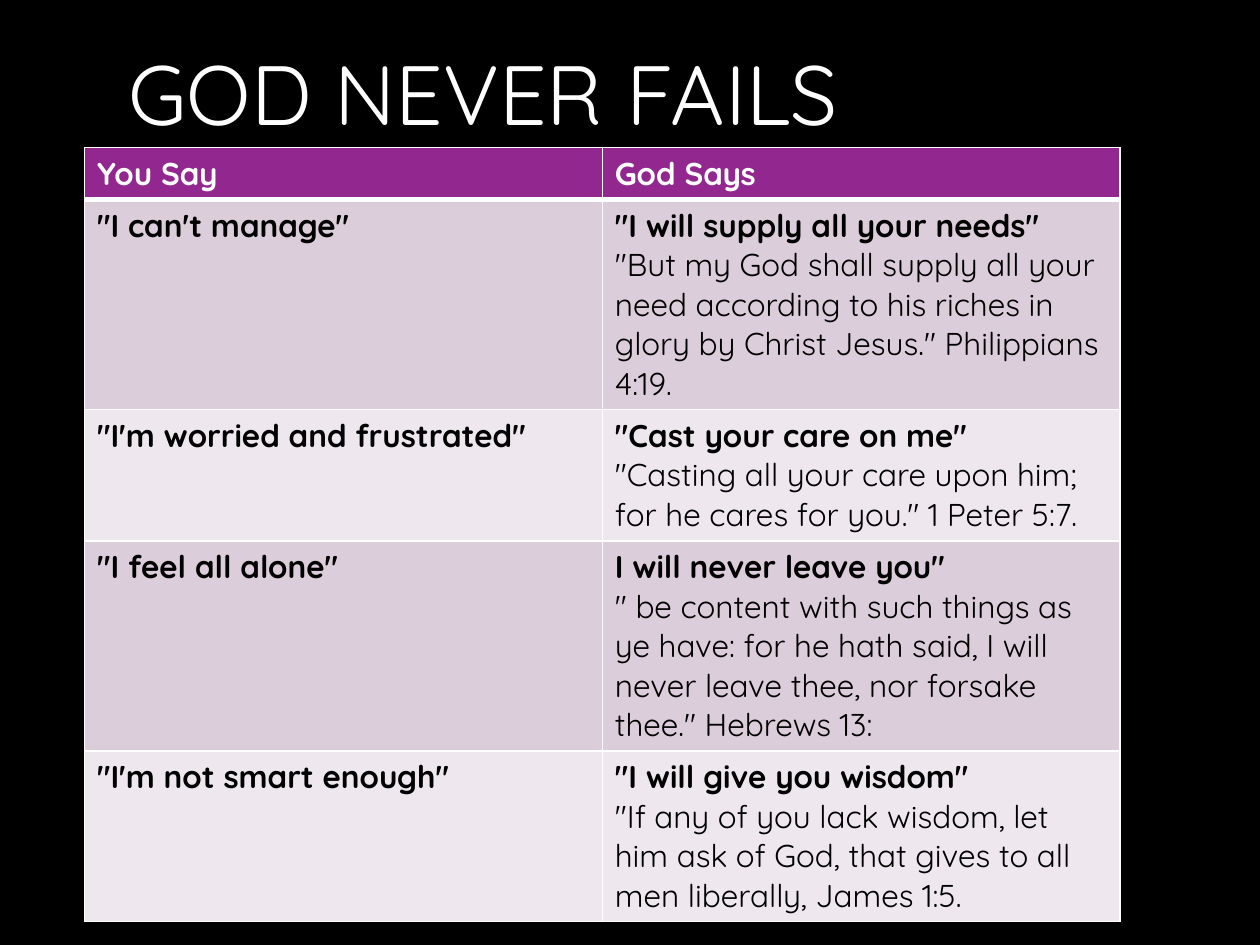
from lxml.etree import SubElement
from pptx import Presentation
from pptx.dml.color import RGBColor
from pptx.enum.text import MSO_ANCHOR, PP_ALIGN
from pptx.oxml.ns import qn
from pptx.util import Inches, Pt

# Content
TITLE = "GOD NEVER FAILS"
HEADER = ("You Say", "God Says")
ROWS = [  # what you say, what God says, verse
    ('"I can\'t manage"', '"I will supply all your needs"',
     '"But my God shall supply all your need according to his riches in glory '
     'by Christ Jesus." Philippians 4:19.'),
    ('"I\'m worried and frustrated"', '"Cast your care on me"',
     '"Casting all your care upon him; for he cares for you." 1 Peter 5:7.'),
    ('"I feel all alone"', 'I will never leave you"',
     '" be content with such things as ye have: for he hath said, I will never '
     'leave thee, nor forsake thee." Hebrews 13:'),
    ('"I\'m not smart enough"', '"I will give you wisdom"',
     '"If any of you lack wisdom, let him ask of God, that gives to all men '
     'liberally, James 1:5.'),
]

# Format
FONT = "Quicksand"
BLACK = RGBColor(0x00, 0x00, 0x00)
WHITE = RGBColor(0xFF, 0xFF, 0xFF)
PURPLE = RGBColor(0x92, 0x27, 0x8F)
BANDS = (RGBColor(0xDC, 0xCD, 0xDB), RGBColor(0xEE, 0xE8, 0xEE))
COL_W, ROW_H = 4.11, 0.41


def add_run(p, text, color, size=18, bold=False):
    r = p.add_run()
    r.text = text
    for name, value in {"name": FONT, "size": Pt(size), "bold": bold}.items():
        setattr(r.font, name, value)
    r.font.color.rgb = color


def set_borders(cell, bottom=1):
    tcPr = cell._tc.get_or_add_tcPr()
    widths = {"a:lnL": 1, "a:lnR": 1, "a:lnT": 1, "a:lnB": bottom}
    for i, (tag, width) in enumerate(widths.items()):
        ln = SubElement(tcPr, qn(tag), w=str(Pt(width)))
        SubElement(SubElement(ln, qn("a:solidFill")), qn("a:srgbClr"), val=str(WHITE))
        tcPr.insert(i, ln)  # borders come before the fill


def fill_cell(cell, fill, color, heading, verse=None, bottom=1):
    cell.fill.solid()
    cell.fill.fore_color.rgb = fill
    set_borders(cell, bottom)
    p = cell.text_frame.paragraphs[0]
    add_run(p, heading, color, bold=True)
    if verse:
        p.add_line_break()
        add_run(p, verse, color)


prs = Presentation()
prs.slide_width, prs.slide_height = Inches(10), Inches(7.5)
s = prs.slides.add_slide(prs.slide_layouts[5])
s.background.fill.solid()
s.background.fill.fore_color.rgb = BLACK

# Title
sp = s.shapes.title
sp.left, sp.top, sp.width, sp.height = map(Inches, (0.92, 0.01, 8.21, 1.44))
tf = sp.text_frame
tf.vertical_anchor = MSO_ANCHOR.MIDDLE
p = tf.paragraphs[0]
p.alignment = PP_ALIGN.LEFT
add_run(p, TITLE, WHITE, size=48)

# Table: rows grow to fit their text
n_rows = len(ROWS) + 1
table = s.shapes.add_table(n_rows, 2, Inches(0.67), Inches(1.17),
                           Inches(2 * COL_W), Inches(n_rows * ROW_H)).table
for col, text in enumerate(HEADER):
    fill_cell(table.cell(0, col), PURPLE, WHITE, text, bottom=3)
for i, (you_say, god_says, verse) in enumerate(ROWS):
    band = BANDS[i % 2]
    fill_cell(table.cell(i + 1, 0), band, BLACK, you_say)
    fill_cell(table.cell(i + 1, 1), band, BLACK, god_says, verse)

prs.save("out.pptx")
